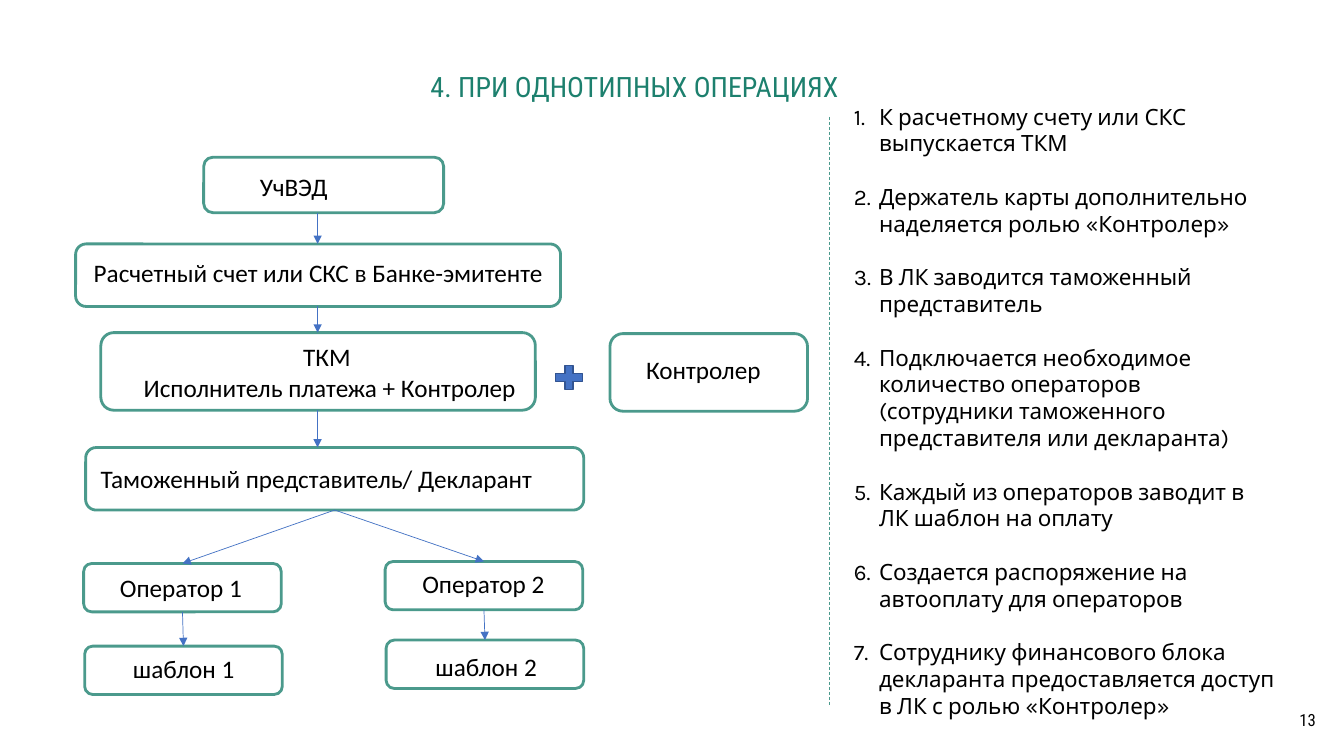
from lxml import etree
from pptx import Presentation
from pptx.dml.color import RGBColor
from pptx.enum.dml import MSO_LINE
from pptx.enum.shapes import MSO_CONNECTOR, MSO_SHAPE
from pptx.enum.text import MSO_ANCHOR, MSO_AUTO_SIZE, PP_ALIGN
from pptx.oxml.ns import qn
from pptx.util import Inches, Pt

LEFT, CENTER, RIGHT = PP_ALIGN.LEFT, PP_ALIGN.CENTER, PP_ALIGN.RIGHT
MIDDLE, GROW = MSO_ANCHOR.MIDDLE, MSO_AUTO_SIZE.SHAPE_TO_FIT_TEXT
ROUNDED, PLUS = MSO_SHAPE.ROUNDED_RECTANGLE, MSO_SHAPE.MATH_PLUS
STRAIGHT, DASH = MSO_CONNECTOR.STRAIGHT, MSO_LINE.DASH

BLACK, GREEN, TEAL = "000000", "1D806E", "4B9A8C"
BLUE, DARK_BLUE = "4472C4", "325491"
BODY, HEADING, LIST = "Calibri", "Roboto Condensed", "Karla"

TITLE = "4. ПРИ ОДНОТИПНЫХ ОПЕРАЦИЯХ"
PAGE = "13"

BOXES = {
    "participant": (2.02, 1.56, 2.38, 0.55),
    "account": (0.75, 2.42, 4.81, 0.62),
    "card": (1, 3.3, 4.31, 0.77),
    "controller": (6.05, 3.31, 1.96, 0.77),
    "agent": (0.85, 4.44, 4.94, 0.62),
    "operator1": (0.83, 5.59, 1.96, 0.48),
    "operator2": (3.82, 5.57, 1.96, 0.48),
    "template1": (0.84, 6.41, 1.96, 0.48),
    "template2": (3.83, 6.35, 1.96, 0.48),
}
LABELS = [
    ("УчВЭД", (2.48, 1.65, 2.06, 0.4), LEFT),
    ("Расчетный счет или СКС в Банке-эмитенте ", (0.45, 2.5, 5.47, 0.4), CENTER),
    ("ТКМ \nИсполнитель платежа + Контролер", (1.27, 3.34, 4, 0.71), CENTER),
    ("Контролер", (6.31, 3.47, 1.62, 0.4), LEFT),
    ("Таможенный представитель/ Декларант", (0.9, 4.55, 4.88, 0.4), LEFT),
    ("Оператор 1", (1.09, 5.63, 1.62, 0.4), LEFT),
    ("Оператор 2", (4.09, 5.59, 1.62, 0.4), LEFT),
    ("шаблон 1", (1.22, 6.43, 1.62, 0.4), LEFT),
    ("шаблон 2", (4.22, 6.41, 1.62, 0.4), LEFT),
]
TRUNK = ["participant", "account", "card", "agent"]
TRUNK_X = 3.15
BRANCHES = [
    ("agent", "operator1"),
    ("agent", "operator2"),
    ("operator1", "template1"),
    ("operator2", "template2"),
]
STEPS = [
    "К расчетному счету или СКС выпускается ТКМ",
    "Держатель карты дополнительно наделяется ролью «Контролер»",
    "В ЛК заводится таможенный представитель",
    "Подключается необходимое количество операторов (сотрудники таможенного "
    "представителя или декларанта)",
    "Каждый из операторов заводит в ЛК шаблон на оплату",
    "Создается распоряжение на автооплату для операторов",
    "Сотруднику финансового блока декларанта предоставляется доступ в ЛК "
    "с ролью «Контролер»",
]


def rgb(color):
    return RGBColor.from_string(color)


def add_text(text, box, font, size, color=BLACK, align=LEFT):
    sp = s.shapes.add_textbox(*map(Inches, box))
    tf = sp.text_frame
    tf.word_wrap = True
    tf.text = text
    for p in tf.paragraphs:
        p.alignment = align
        for r in p.runs:
            r.font.name = font
            r.font.size = Pt(size)
            r.font.color.rgb = rgb(color)
    return tf


def add_shape(kind, box, line, width, fill=None):
    sp = s.shapes.add_shape(kind, *map(Inches, box))
    sp.shadow.inherit = False
    if fill:
        sp.fill.solid()
        sp.fill.fore_color.rgb = rgb(fill)
    else:
        sp.fill.background()
    sp.line.color.rgb = rgb(line)
    sp.line.width = Pt(width)


def add_line(start, end, color):
    c = s.shapes.add_connector(STRAIGHT, *map(Inches, (*start, *end)))
    c.line.color.rgb = rgb(color)
    c.line.width = Pt(0.5)
    etree.SubElement(c._element.spPr, qn("a:effectLst"))
    return c


def add_arrow(start, end):
    ln = add_line(start, end, BLUE).line._get_or_add_ln()
    etree.SubElement(ln, qn("a:tailEnd"), type="triangle")


def top(name):
    x, y, w, h = BOXES[name]
    return x + w / 2, y


def bottom(name):
    x, y, w, h = BOXES[name]
    return x + w / 2, y + h


prs = Presentation()
prs.slide_width, prs.slide_height = Inches(13.33), Inches(7.5)
s = prs.slides.add_slide(prs.slide_layouts[6])

tf = add_text(TITLE, (4.27, 0.48, 8.54, 0.79), HEADING, 20, GREEN)
tf.margin_left = tf.margin_top = tf.margin_right = tf.margin_bottom = 0
tf.vertical_anchor = MIDDLE
tf.paragraphs[0].line_spacing = 0.9

tf = add_text(PAGE, (10.15, 6.95, 3, 0.4), HEADING, 12, align=RIGHT)
tf.vertical_anchor = MIDDLE
tf.paragraphs[0].line_spacing = 0.9

for box in BOXES.values():
    add_shape(ROUNDED, box, TEAL, 2)
for text, box, align in LABELS:
    add_text(text, box, BODY, 18, align=align).auto_size = GROW
add_shape(PLUS, (5.46, 3.58, 0.37, 0.33), DARK_BLUE, 1, BLUE)

for upper, lower in zip(TRUNK, TRUNK[1:]):
    add_arrow((TRUNK_X, bottom(upper)[1]), (TRUNK_X, top(lower)[1]))
for upper, lower in BRANCHES:
    add_arrow(bottom(upper), top(lower))
add_line((8.23, 1.16), (8.23, 6.99), TEAL).line.dash_style = DASH

tf = add_text("\n".join(STEPS), (8.37, 0.97, 4.38, 6.56), LIST, 16)
tf.auto_size = GROW
for i, p in enumerate(tf.paragraphs):
    pPr = p._p.get_or_add_pPr()
    pPr.set("marL", str(Inches(0.25)))
    pPr.set("indent", str(Inches(-0.25)))
    etree.SubElement(pPr, qn("a:buFont"), typeface="+mj-lt")
    etree.SubElement(pPr, qn("a:buAutoNum"), type="arabicPeriod")
    if i:
        p.space_before = Pt(19)

prs.save("out.pptx")
